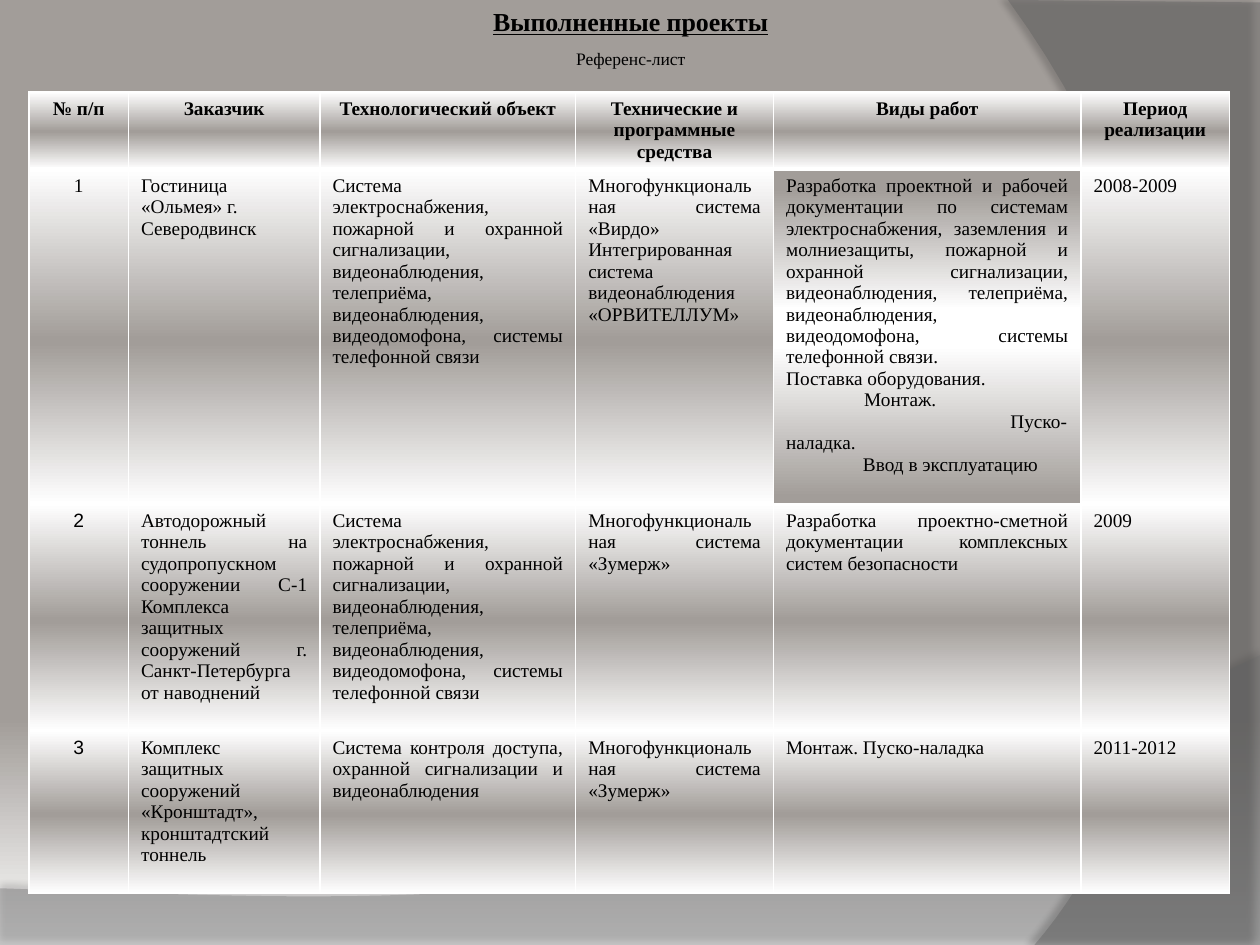
from lxml.etree import SubElement
from pptx import Presentation
from pptx.dml.color import RGBColor
from pptx.enum.text import MSO_ANCHOR, PP_ALIGN
from pptx.oxml.ns import qn
from pptx.util import Inches, Pt

GRID_COLUMNS, GRID_ROWS = 100, 75
SERIF, SANS = "Times New Roman", "Arial"
BLACK, WHITE, STONE = "000000", "FFFFFF", "A29D99"
BACKDROP = [(22, STONE), (76, STONE), (100, WHITE)]
SHEEN = [(0, WHITE), (51, STONE), (52, STONE), (100, WHITE)]
GLOW = [(6, STONE), (42, WHITE), (53, WHITE), (98, STONE)]
CENTER, LEFT, JUSTIFY = PP_ALIGN.CENTER, PP_ALIGN.LEFT, PP_ALIGN.JUSTIFY


def rgb(value):
    return RGBColor.from_string(value)


def add_color(parent, value, opacity=100):
    color = SubElement(parent, qn("a:srgbClr"), val=value)
    if opacity < 100:
        SubElement(color, qn("a:alpha"), val=str(opacity * 1000))


def set_gradient(fill, element, stops):
    """Fill from top to bottom; element is the XML that holds the fill."""
    fill.gradient()
    fill.gradient_angle = 270
    stop_list = element.find(".//" + qn("a:gsLst"))
    for stop in list(stop_list):
        stop_list.remove(stop)
    for position, color in stops:
        add_color(SubElement(stop_list, qn("a:gs"), pos=str(position * 1000)), color)


def set_borders(cell, widths):
    """Widths in points for left, right, top and bottom."""
    properties = cell._tc.get_or_add_tcPr()
    for side, width in zip("LRTB", widths):
        line = SubElement(properties, qn(f"a:ln{side}"), w=str(Pt(width)))
        add_color(SubElement(line, qn("a:solidFill")), WHITE)


def curve(start, first, second, end, steps=40):
    """Points of a cubic Bezier curve."""
    points = []
    for step in range(1, steps + 1):
        t = step / steps
        weights = ((1 - t) ** 3, 3 * t * (1 - t) ** 2, 3 * t * t * (1 - t), t ** 3)
        points.append(tuple(sum(w * p[axis] for w, p in zip(weights, (start, first, second, end)))
                            for axis in (0, 1)))
    return points


class SlideBuilder:
    def __init__(self, deck):
        self.unit_x = deck.slide_width / GRID_COLUMNS
        self.unit_y = deck.slide_height / GRID_ROWS
        self.slide = deck.slides.add_slide(deck.slide_layouts[5])
        self.shapes = self.slide.shapes

    def x(self, columns):
        return round(columns * self.unit_x)

    def y(self, rows):
        return round(rows * self.unit_y)

    def frame(self, left, top, width, height):
        return self.x(left), self.y(top), self.x(width), self.y(height)

    def background(self, stops):
        set_gradient(self.slide.background.fill, self.slide.element, stops)

    def veil(self, points, color, opacity, shadow_opacity, distance, direction):
        """Translucent outline with a soft shadow."""
        corners = [(self.x(column), self.y(row)) for column, row in points]
        builder = self.shapes.build_freeform(*corners[0])
        builder.add_line_segments(corners[1:], close=True)
        shape = builder.convert_to_shape()
        shape.line.fill.background()
        shape.fill.solid()
        shape.fill.fore_color.rgb = rgb(color)
        fill_color = shape.element.spPr.find(".//" + qn("a:srgbClr"))
        SubElement(fill_color, qn("a:alpha"), val=str(opacity * 1000))
        shape.shadow.inherit = False
        effects = shape.element.spPr.find(qn("a:effectLst"))
        shadow = SubElement(effects, qn("a:outerShdw"), blurRad=str(Pt(4)),
                            dist=str(Pt(distance)), dir=str(direction * 60000))
        add_color(shadow, BLACK, shadow_opacity)

    def style(self, para, size, font=SERIF, bold=False, underline=False, align=CENTER):
        para.alignment = align
        for span in para.runs:
            span.font.size = Pt(size)
            span.font.name = font
            span.font.bold = bold
            span.font.underline = underline
            span.font.color.rgb = rgb(BLACK)

    def title(self, text, area):
        box = self.shapes.title
        box.left, box.top, box.width, box.height = self.frame(*area)
        frame = box.text_frame
        frame.text = text
        frame.vertical_anchor = MSO_ANCHOR.MIDDLE
        frame.margin_top = frame.margin_bottom = 0
        frame.margin_left = frame.margin_right = Inches(0.05)
        self.style(frame.paragraphs[0], 14.8, bold=True, underline=True)

    def caption(self, text, area):
        frame = self.shapes.add_textbox(*self.frame(*area)).text_frame
        frame.word_wrap = True
        frame.text = text
        self.style(frame.paragraphs[0], 10)

    def table(self, left, top, widths, heights, content):
        area = self.frame(left, top, sum(widths), sum(heights))
        table = self.shapes.add_table(len(heights), len(widths), *area).table
        table.horz_banding = False
        for column, width in zip(table.columns, widths):
            column.width = self.x(width)
        for row, height in zip(table.rows, heights):
            row.height = self.y(height)
        for i, texts in enumerate(content):
            for j, text in enumerate(texts):
                cell = table.cell(i, j)
                cell.text_frame.text = text
                centered = i == 0 or j == 0
                for para in cell.text_frame.paragraphs:
                    self.style(para, 11, font=SANS if j == 0 and i > 1 else SERIF,
                               bold=i == 0, align=CENTER if centered else JUSTIFY)
                set_borders(cell, (1, 1, 3 if i == 1 else 1, 3 if i == 0 else 1))
                set_gradient(cell.fill, cell._tc, SHEEN)
        return table

    def indent_first_line(self, para, columns):
        para._p.get_or_add_pPr().set("indent", str(self.x(columns)))


SYSTEMS = ("Система электроснабжения, пожарной и охранной сигнализации, видеонаблюдения, "
           "телеприёма, видеонаблюдения, видеодомофона, системы телефонной связи")
FIRE_SYSTEM = "Многофункциональная система «Зумерж»"
PROJECTS = [
    ["№ п/п", "Заказчик", "Технологический объект", "Технические и программные средства",
     "Виды работ", "Период реализации"],
    ["1", "Гостиница «Ольмея» г. Северодвинск", SYSTEMS,
     "Многофункциональная система «Вирдо»\n"
     "Интегрированная система видеонаблюдения «ОРВИТЕЛЛУМ»",
     "Разработка проектной и рабочей документации по системам электроснабжения, заземления и "
     "молниезащиты, пожарной и охранной сигнализации, видеонаблюдения, телеприёма, "
     "видеонаблюдения, видеодомофона, системы телефонной связи.\n"
     "Поставка оборудования.\nМонтаж.\nПуско-наладка.\nВвод в эксплуатацию",
     "2008-2009"],
    ["2", "Автодорожный тоннель на судопропускном сооружении С-1 Комплекса защитных "
     "сооружений г. Санкт-Петербурга от наводнений", SYSTEMS, FIRE_SYSTEM,
     "Разработка проектно-сметной документации комплексных систем безопасности", "2009"],
    ["3", "Комплекс защитных сооружений «Кронштадт», кронштадтский тоннель",
     "Система контроля доступа, охранной сигнализации и видеонаблюдения", FIRE_SYSTEM,
     "Монтаж. Пуско-наладка", "2011-2012"],
]


def main():
    deck = Presentation()
    deck.slide_width, deck.slide_height = Inches(10), Inches(7.5)
    builder = SlideBuilder(deck)
    builder.background(BACKDROP)

    wave = curve((100, 52), (55.9, 72.9), (39.1, 71.9), (0, 70.5))
    builder.veil([(0, 75.1), (100, 75.1), (100, 52)] + wave, "7F7F7F", 45, 35, 3.5, 270)
    arc = curve((82.1, 75), (93.5, 61.9), (101.8, 30), (80, 0))
    builder.veil([(100, 0.2), (100, 75), (82.1, 75)] + arc, "5E5E5E", 40, 45, 4, 180)

    table = builder.table(2.3, 7.3, [7.9, 15.2, 20.3, 15.7, 24.4, 11.8],
                          [6, 26.6, 18, 12.9], PROJECTS)
    table.cell(1, 1).text_frame.paragraphs[0].alignment = LEFT
    works = table.cell(1, 4)
    set_gradient(works.fill, works._tc, GLOW)
    for para, columns in zip(works.text_frame.paragraphs[2:], (6.2, 17.8, 6.1)):
        builder.indent_first_line(para, columns)

    builder.title("Выполненные проекты", (13.8, 0.5, 72.5, 2.4))
    builder.caption("Референс-лист", (13.8, 3.3, 72.5, 3.6))
    deck.save("out.pptx")


if __name__ == "__main__":
    main()
